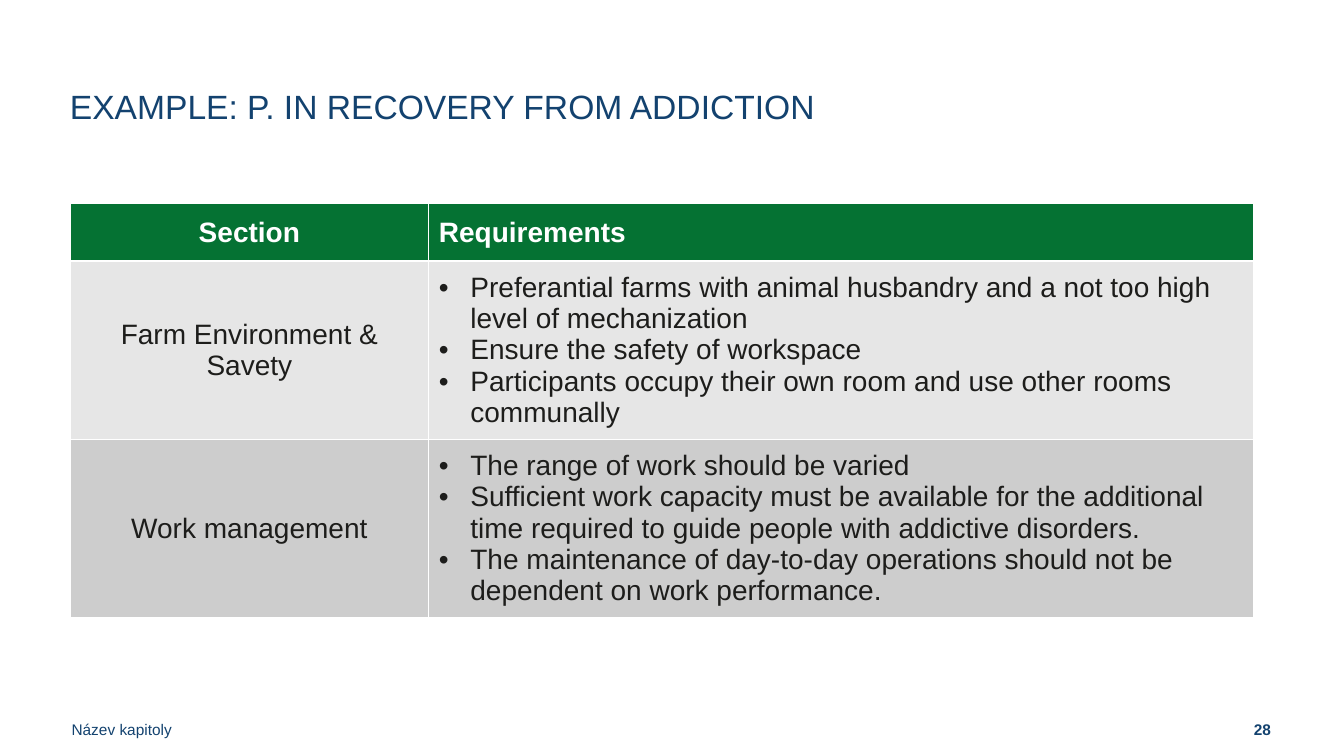
from dataclasses import dataclass

from lxml.etree import SubElement
from pptx import Presentation
from pptx.dml.color import RGBColor
from pptx.enum.text import MSO_ANCHOR, PP_ALIGN
from pptx.oxml.ns import qn
from pptx.util import Pt


@dataclass(frozen=True)
class Theme:
    font: str = "Arial"
    navy: str = "13426F"
    ink: str = "1D1D1B"
    white: str = "FFFFFF"
    green: str = "057233"
    pale: str = "E6E6E6"
    grey: str = "CDCDCD"
    title: int = 24
    body: int = 20
    small: int = 11


class Deck:
    def __init__(self, theme):
        self.theme = theme
        self.file = Presentation()
        self.file.slide_width, self.file.slide_height = Pt(960), Pt(540)
        self.slide = self.file.slides.add_slide(self.file.slide_layouts[6])

    def style(self, para, size, color, bold=False, align=PP_ALIGN.LEFT):
        para.alignment = align
        form = {"name": self.theme.font, "size": Pt(size), "bold": bold}
        for key, value in form.items():
            setattr(para.font, key, value)
        para.font.color.rgb = RGBColor.from_string(color)

    def text(self, words, box, pads, size, lead, anchor=MSO_ANCHOR.TOP, **look):
        """Add one line of navy text; pads run left, top, right, bottom."""
        frame = self.slide.shapes.add_textbox(*map(Pt, box)).text_frame
        form = {"word_wrap": True, "vertical_anchor": anchor}
        for side, pad in zip(("left", "top", "right", "bottom"), pads):
            form["margin_" + side] = Pt(pad)
        for key, value in form.items():
            setattr(frame, key, value)
        para = frame.paragraphs[0]
        para.text = words
        para.line_spacing = Pt(lead)
        self.style(para, size, self.theme.navy, **look)

    def bullet(self, para, indent=22.5):
        props = para._p.get_or_add_pPr()
        props.set("marL", str(Pt(indent)))
        props.set("indent", str(Pt(-indent)))
        SubElement(props, qn("a:buFont"), typeface=self.theme.font)
        SubElement(props, qn("a:buChar"), char="•")

    def border(self, cell, top, bottom):
        """Draw white borders; they must come before the fill in the XML."""
        props = cell._tc.get_or_add_tcPr()
        for side, width in {"L": 1, "R": 1, "T": top, "B": bottom}.items():
            line = SubElement(props, qn("a:ln" + side), w=str(Pt(width)))
            fill = SubElement(line, qn("a:solidFill"))
            SubElement(fill, qn("a:srgbClr"), val=self.theme.white)

    def cell(self, cell, lines, fill, color, edges, bold, align, dots):
        self.border(cell, *edges)
        cell.fill.solid()
        cell.fill.fore_color.rgb = RGBColor.from_string(fill)
        cell.vertical_anchor = MSO_ANCHOR.MIDDLE
        cell.text = "\n".join(lines)
        for para in cell.text_frame.paragraphs:
            if dots:
                self.bullet(para)
            self.style(para, self.theme.body, color, bold, align)

    def table(self, rows, fills, left, top, widths, heights):
        box = (left, top, sum(widths), sum(heights))
        shape = self.slide.shapes.add_table(len(rows), len(widths), *map(Pt, box))
        grid = shape.table
        for col, width in zip(grid.columns, widths):
            col.width = Pt(width)
        for row, height in zip(grid.rows, heights):
            row.height = Pt(height)
        for i, (label, *items) in enumerate(rows):
            head = i == 0
            color = self.theme.white if head else self.theme.ink
            edges = (1 if i < 2 else 0.75, 1 if head else 0.75)
            self.cell(grid.cell(i, 0), [label], fills[i], color, edges,
                      head, PP_ALIGN.CENTER, False)
            self.cell(grid.cell(i, 1), items, fills[i], color, edges,
                      head, PP_ALIGN.LEFT, not head)


ROWS = [
    ("Section", "Requirements"),
    ("Farm Environment & Savety",
     "Preferantial farms with animal husbandry and a not too high level of mechanization",
     "Ensure the safety of workspace",
     "Participants occupy their own room and use other rooms communally"),
    ("Work management",
     "The range of work should be varied",
     "Sufficient work capacity must be available for the additional time required "
     "to guide people with addictive disorders.",
     "The maintenance of day-to-day operations should not be dependent on work performance."),
]


def main():
    theme = Theme()
    deck = Deck(theme)
    low = MSO_ANCHOR.BOTTOM
    deck.text("Název kapitoly", (0, 496, 324, 43.2), (51.1, 3.6, 0, 11.5),
              theme.small, 13.3, low)
    deck.text("28", (743, 496, 216, 43.2), (0, 3.6, 51.1, 11.5),
              theme.small, 13.3, low, bold=True, align=PP_ALIGN.RIGHT)
    deck.text("EXAMPLE: P. IN RECOVERY FROM ADDICTION", (50, 52.5, 845, 51),
              (0, 3.6, 7.2, 3.6), theme.title, 34)
    deck.table(ROWS, (theme.green, theme.pale, theme.grey), 50, 145.5,
               (256.3, 589), (41, 118.5, 118.5))
    deck.file.save("out.pptx")


if __name__ == "__main__":
    main()
